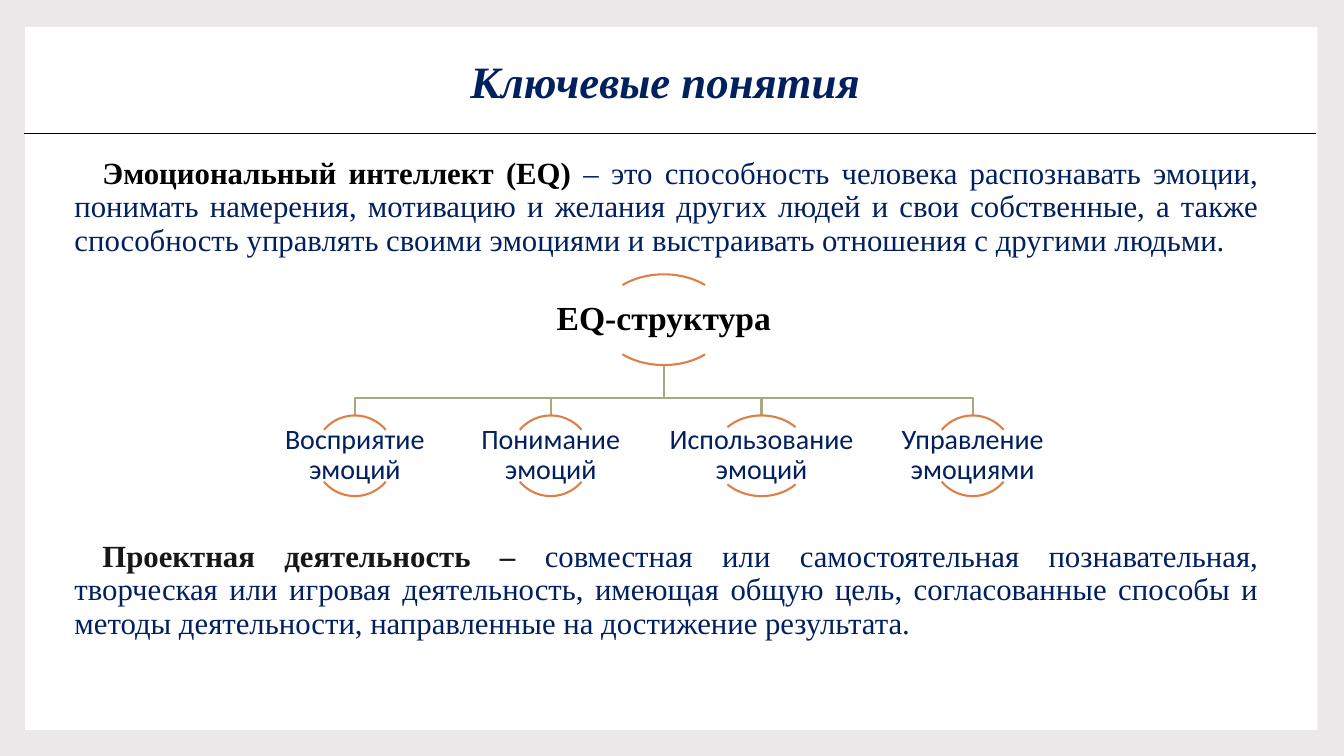
from lxml import etree
from pptx import Presentation
from pptx import util as u
from pptx.dml import color
from pptx.enum import shapes, text
from pptx.oxml import ns

Pt = u.Pt
NAVY = "002060"
SERIF = "Times New Roman"
ROOT_CENTER, ROOT_TOP, ROOT_WIDTH, ROOT_HEIGHT = 474.2, 196, 91.4, 64.8
BRANCH_TOP, BRANCH_HEIGHT, BUS_TOP = 296.8, 57.6, 284.6
BRANCHES = [
    ("Восприятие эмоций", 253.5, 57.6),
    ("Понимание эмоций", 393.4, 57.6),
    ("Использование эмоций", 544, 69),
    ("Управление эмоциями", 694.8, 57.6),
]


def rgb(value):
    return color.RGBColor.from_string(value)


def outline(shape, line_color, width):
    shape.line.color.rgb = rgb(line_color)
    shape.line.width = Pt(width)


def add_panel(page, left, top, width, height, fill):
    panel = page.shapes.add_shape(
        shapes.MSO_SHAPE.RECTANGLE, Pt(left), Pt(top), Pt(width), Pt(height))
    panel.shadow.inherit = False
    panel.fill.solid()
    panel.fill.fore_color.rgb = rgb(fill)
    panel.line.fill.background()


def add_rule(page, left, right, top):
    rule = page.shapes.add_connector(
        shapes.MSO_CONNECTOR.STRAIGHT, Pt(left), Pt(top), Pt(right), Pt(top))
    outline(rule, "000000", 0.79)
    etree.SubElement(rule._element.spPr, ns.qn("a:effectLst"))


def add_box(page, left, top, width, height, anchor, inset):
    box = page.shapes.add_textbox(Pt(left), Pt(top), Pt(width), Pt(height))
    frame = box.text_frame
    frame.word_wrap = True
    frame.vertical_anchor = anchor
    frame.margin_left = frame.margin_right = Pt(inset)
    frame.margin_top = frame.margin_bottom = Pt(inset / 2)
    para = frame.paragraphs[0]
    para.line_spacing = 0.9
    return para


def add_span(para, words, size, fill=NAVY, font=SERIF, bold=False, italic=False):
    span = para.add_run()
    span.text = words
    span.font.size = Pt(size)
    span.font.name = font
    span.font.color.rgb = rgb(fill)
    span.font.bold = bold
    span.font.italic = italic


def add_centered(page, words, left, top, width, height, inset=1, **style):
    para = add_box(page, left, top, width, height, text.MSO_ANCHOR.MIDDLE, inset)
    para.alignment = text.PP_ALIGN.CENTER
    add_span(para, words, **style)


def add_definition(page, top, term, meaning, term_color):
    para = add_box(page, 42.5, top, 863.3, 86, text.MSO_ANCHOR.TOP, 7.2)
    para.alignment = text.PP_ALIGN.JUSTIFY
    properties = para._p.get_or_add_pPr()
    properties.set("marL", str(Pt(3.6)))
    properties.set("indent", str(Pt(20)))
    add_span(para, term, 22, fill=term_color, bold=True)
    add_span(para, meaning, 22)


def add_branch_line(page, center):
    start = ROOT_TOP + ROOT_HEIGHT
    builder = page.shapes.build_freeform(Pt(ROOT_CENTER), Pt(start))
    corners = [(ROOT_CENTER, BUS_TOP), (center, BUS_TOP), (center, BRANCH_TOP)]
    builder.add_line_segments([(Pt(x), Pt(y)) for x, y in corners], close=False)
    branch_line = builder.convert_to_shape()
    branch_line.shadow.inherit = False
    branch_line.fill.background()
    outline(branch_line, "A5AB81", 1.5)


def add_node(page, words, center, top, width, height, **style):
    for start, end in ((132, 192), (24, 84)):
        arc = page.shapes.add_shape(
            shapes.MSO_SHAPE.ARC, Pt(center - width / 2), Pt(top), Pt(width), Pt(height))
        arc.adjustments[0] = start
        arc.adjustments[1] = end
        arc.shadow.inherit = False
        arc.fill.background()
        outline(arc, "DD8047", 1.5)
    label_height = height * 0.64
    add_centered(page, words, center - width, top + (height - label_height) / 2,
                 width * 2, label_height, **style)


def main():
    deck = Presentation()
    deck.slide_width, deck.slide_height = Pt(960), Pt(540)
    page = deck.slides.add_slide(deck.slide_layouts[6])
    page.background.fill.solid()
    page.background.fill.fore_color.rgb = rgb("EAE8E8")
    add_panel(page, 18, 19.4, 923, 502, "FFFFFF")
    add_centered(page, "Ключевые понятия", 133.2, 31.7, 684, 56.9, inset=7.2,
                 size=32, bold=True, italic=True)
    add_rule(page, 17.3, 940.3, 95.5)
    add_definition(
        page, 109.4, "Эмоциональный интеллект (EQ) ",
        "– это способность человека распознавать эмоции, понимать намерения, "
        "мотивацию и желания других людей и свои собственные, а также способность "
        "управлять своими эмоциями и выстраивать отношения с другими людьми.",
        "000000")
    add_definition(
        page, 383, "Проектная деятельность – ",
        "совместная или самостоятельная познавательная, творческая или игровая "
        "деятельность, имеющая общую цель, согласованные способы и методы "
        "деятельности, направленные на достижение результата.",
        "181616")
    for words, center, width in BRANCHES:
        add_branch_line(page, center)
    add_node(page, "EQ-структура", ROOT_CENTER, ROOT_TOP, ROOT_WIDTH, ROOT_HEIGHT,
             size=24, fill="000000", bold=True)
    for words, center, width in BRANCHES:
        add_node(page, words, center, BRANCH_TOP, width, BRANCH_HEIGHT,
                 size=20, font="Calibri")
    deck.save("out.pptx")


if __name__ == "__main__":
    main()
